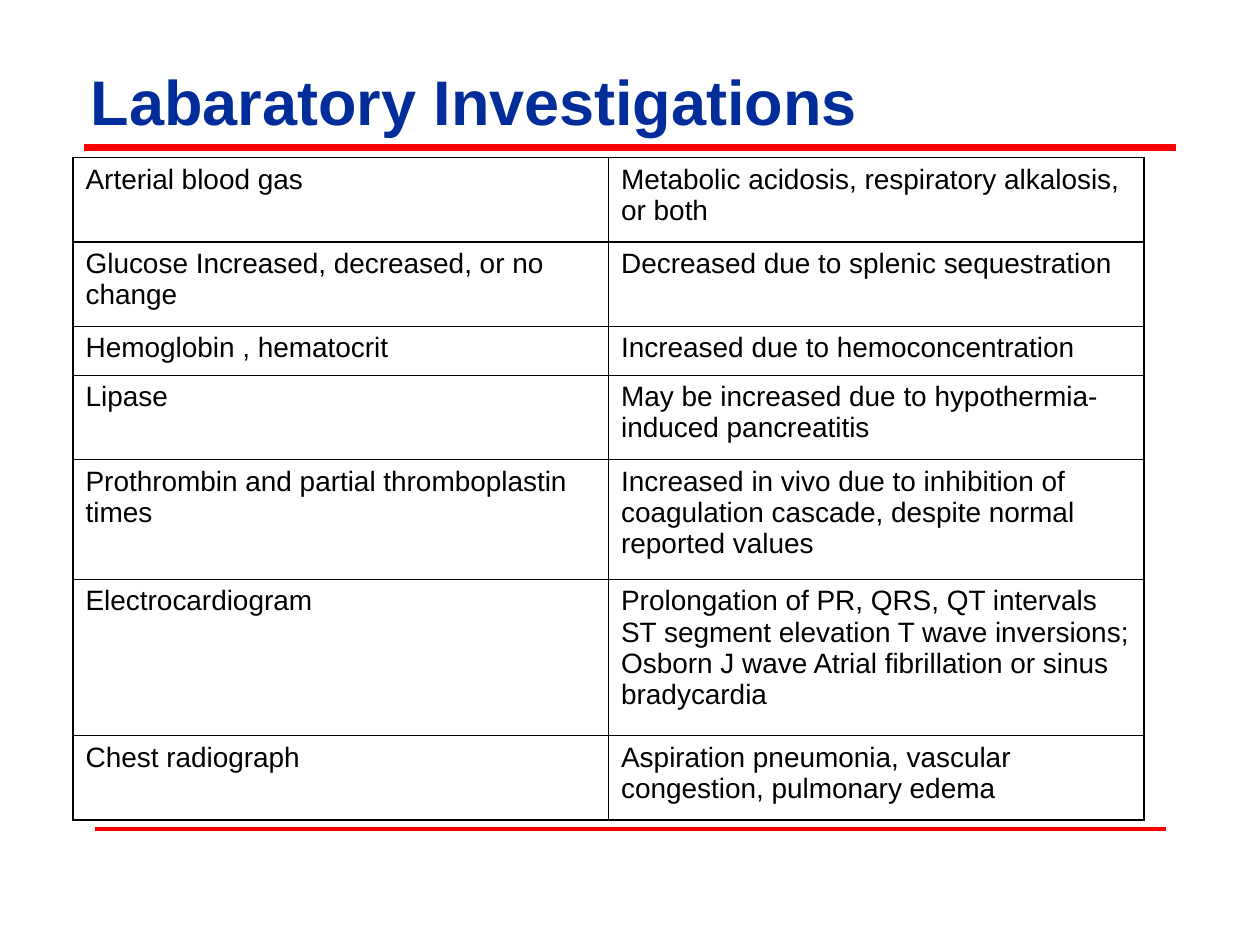
from lxml import etree
from pptx import Presentation
from pptx.dml.color import RGBColor
from pptx.enum.shapes import MSO_CONNECTOR
from pptx.enum.text import MSO_ANCHOR, PP_ALIGN
from pptx.oxml.ns import qn
from pptx.util import Inches, Pt

STRAIGHT = MSO_CONNECTOR.STRAIGHT
BOTTOM = MSO_ANCHOR.BOTTOM
LEFT = PP_ALIGN.LEFT

TITLE_ONLY = 5
RED, BLUE, BLACK = "FF0000", "012D9A", "000000"

FINDINGS = [
    ("Arterial blood gas", "Metabolic acidosis, respiratory alkalosis, or both"),
    ("Glucose Increased, decreased, or no change",
     "Decreased due to splenic sequestration"),
    ("Hemoglobin , hematocrit", "Increased due to hemoconcentration"),
    ("Lipase", "May be increased due to hypothermia-induced pancreatitis"),
    ("Prothrombin and partial thromboplastin times",
     "Increased in vivo due to inhibition of coagulation cascade, "
     "despite normal reported values"),
    ("Electrocardiogram",
     "Prolongation of PR, QRS, QT intervals ST segment elevation "
     "T wave inversions; Osborn J wave Atrial fibrillation or sinus bradycardia"),
    ("Chest radiograph",
     "Aspiration pneumonia, vascular congestion, pulmonary edema"),
]
ROW_HEIGHTS = [0.67, 0.67, 0.39, 0.67, 0.95, 1.24, 0.67]
COLUMN_WIDTH = 4.25


def color(hex_string):
    return RGBColor.from_string(hex_string)


def write_text(frame, text, size, ink=BLACK, bold=False, font="Arial"):
    para = frame.paragraphs[0]
    para.alignment = LEFT
    span = para.add_run()
    span.text = text
    span.font.name = font
    span.font.size = Pt(size)
    span.font.bold = bold
    span.font.color.rgb = color(ink)


def add_rule(page, left, right, top, weight):
    rule = page.shapes.add_connector(
        STRAIGHT, Inches(left), Inches(top), Inches(right), Inches(top))
    rule.line.color.rgb = color(RED)
    rule.line.width = Pt(weight)
    etree.SubElement(rule._element.spPr, qn("a:effectLst"))


def set_title(page, text):
    box = page.shapes.title
    box.left, box.top = Inches(0.67), Inches(0.5)
    box.width, box.height = Inches(8.67), Inches(0.6)
    frame = box.text_frame
    frame.word_wrap = True
    frame.vertical_anchor = BOTTOM
    frame.margin_left = frame.margin_right = Inches(0.05)
    frame.margin_top = frame.margin_bottom = 0
    write_text(frame, text, 36, ink=BLUE, bold=True)


def add_borders(cell, weight=1):
    properties = cell._tc.get_or_add_tcPr()
    for side in ("a:lnL", "a:lnR", "a:lnT", "a:lnB"):
        border = etree.SubElement(properties, qn(side), w=str(Pt(weight)))
        fill = etree.SubElement(border, qn("a:solidFill"))
        etree.SubElement(fill, qn("a:srgbClr"), val=BLACK)


def add_findings_table(page, left, top):
    table = page.shapes.add_table(
        len(FINDINGS), 2, Inches(left), Inches(top),
        Inches(2 * COLUMN_WIDTH), Inches(sum(ROW_HEIGHTS))).table
    table.first_row = table.horz_banding = False
    for column in table.columns:
        column.width = Inches(COLUMN_WIDTH)
    for row, height, texts in zip(table.rows, ROW_HEIGHTS, FINDINGS):
        row.height = Inches(height)
        for cell, text in zip(row.cells, texts):
            write_text(cell.text_frame, text, 16)
            # Borders come before the fill in the cell properties
            add_borders(cell)
            cell.fill.background()


def main():
    deck = Presentation()
    deck.slide_width, deck.slide_height = Inches(10), Inches(7.5)
    page = deck.slides.add_slide(deck.slide_layouts[TITLE_ONLY])

    # Red rules under the title and above the footer
    add_rule(page, 0.67, 9.33, 1.17, 4)
    add_rule(page, 0.75, 9.25, 6.58, 2)

    # Title and table of findings
    set_title(page, "Labaratory Investigations")
    add_findings_table(page, 0.58, 1.25)

    deck.save("out.pptx")


if __name__ == "__main__":
    main()
